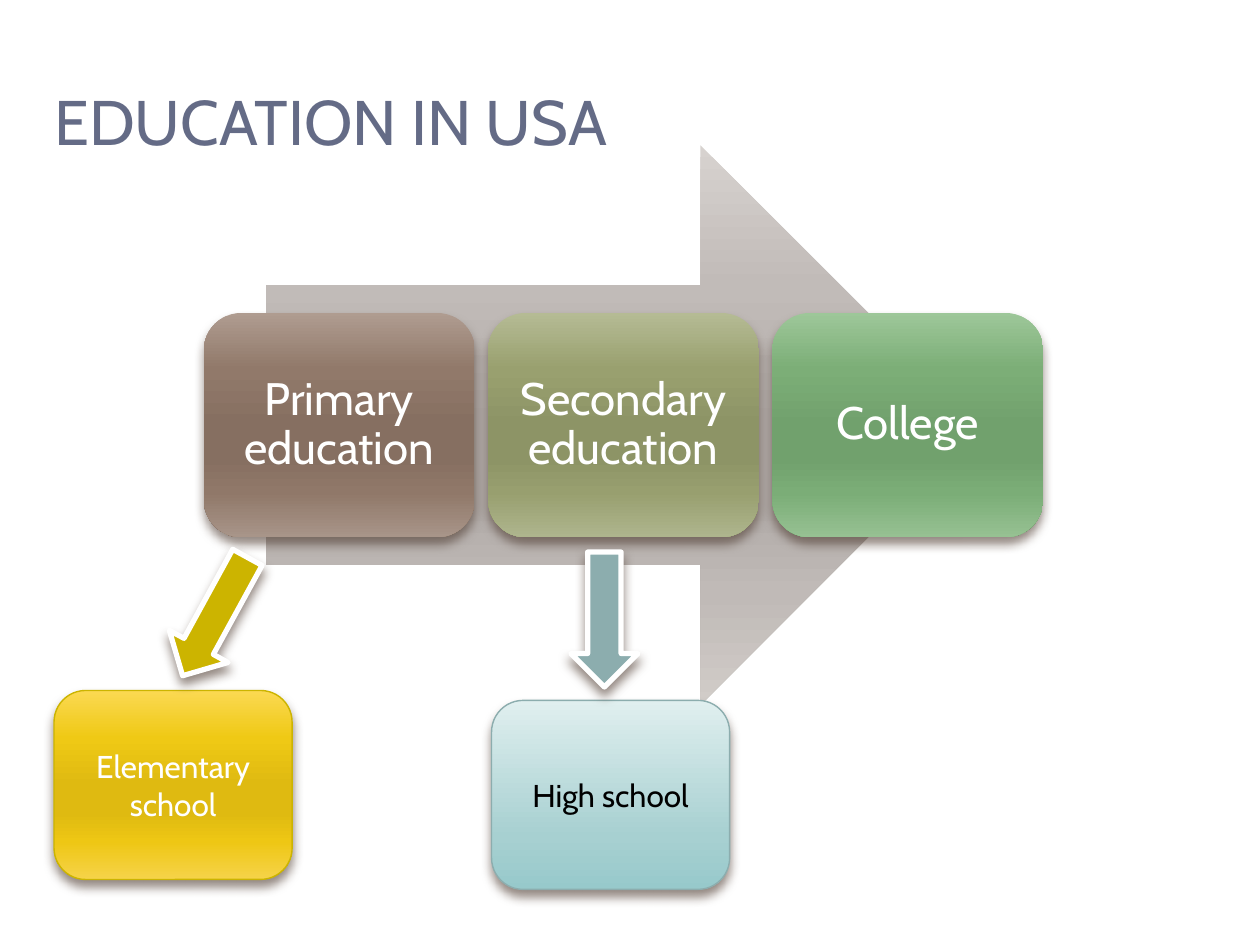
from dataclasses import dataclass
from typing import Optional

import pptx
import pptx.dml.color
import pptx.enum.shapes
import pptx.enum.text
import pptx.oxml
import pptx.oxml.ns
import pptx.util
from pptx.util import Cm

SHAPE = pptx.enum.shapes.MSO_SHAPE
ALIGN = pptx.enum.text.PP_ALIGN
MIDDLE = pptx.enum.text.MSO_ANCHOR.MIDDLE
FONT = "Cabin"
COLORS = {
    "title": "646B86", "white": "FFFFFF", "black": "000000",
    "gold": "CCB400", "teal": "8CADAE", "shadow": "4E3B30",
}
SIX_STOPS = (0, 25, 50, 65, 80, 100)
GRADIENTS = {
    "flow": (SIX_STOPS, "D7D2CF C1BBB8 B2ACA9 B2ACA9 C0BAB7 D1CCC8"),
    "brown": (SIX_STOPS, "AF9C90 91796A 866F61 866F61 907869 A89589"),
    "olive": (SIX_STOPS, "B5BB94 99A06F 8D9466 8D9466 989F6F AEB58D"),
    "green": (SIX_STOPS, "9DC799 7CAE77 71A16D 71A16D 7BAD77 96C192"),
    "yellow": (SIX_STOPS, "FBD952 EFC915 DFBA11 DFBA11 EEC714 F6D349"),
    "aqua": ((0, 72, 100), "E0EFEF A7D0D1 97C9CB"),
}


@dataclass
class Box:
    """A filled shape; lengths in cm, line width in points."""
    kind: int
    left: float
    top: float
    width: float
    height: float
    fill: str
    line: Optional[str] = None
    line_width: float = 0.79
    rotation: float = 0
    shadow: bool = True
    text: str = ""
    size: float = 18
    color: str = "white"
    inset: float = 0.25
    spacing: float = 1.0


def rgb(name: str) -> pptx.dml.color.RGBColor:
    return pptx.dml.color.RGBColor.from_string(COLORS[name])


def format_run(r, size: float, color: str) -> None:
    for key, value in {"name": FONT, "size": pptx.util.Pt(size)}.items():
        setattr(r.font, key, value)
    r.font.color.rgb = rgb(color)


def set_gradient(s, name: str) -> None:
    positions, colors = GRADIENTS[name]
    stops = "".join(
        f'<a:gs pos="{pos * 1000}"><a:srgbClr val="{color}"/></a:gs>'
        for pos, color in zip(positions, colors.split()))
    grad = pptx.oxml.parse_xml(
        f'<a:gradFill {pptx.oxml.ns.nsdecls("a")} rotWithShape="1">'
        f'<a:gsLst>{stops}</a:gsLst><a:lin ang="5400000" scaled="0"/></a:gradFill>')
    s._element.spPr.find(pptx.oxml.ns.qn("a:prstGeom")).addnext(grad)


def add_shadow(s) -> None:
    effects = s._element.spPr.find(pptx.oxml.ns.qn("a:effectLst"))
    blur, dist = pptx.util.Pt(6), pptx.util.Pt(4)
    effects.append(pptx.oxml.parse_xml(
        f'<a:outerShdw {pptx.oxml.ns.nsdecls("a")} blurRad="{blur}" dist="{dist}" '
        f'dir="5400000" rotWithShape="0"><a:srgbClr val="{COLORS["shadow"]}">'
        '<a:alpha val="60000"/></a:srgbClr></a:outerShdw>'))


def add_box(slide, box: Box) -> None:
    s = slide.shapes.add_shape(
        box.kind, Cm(box.left), Cm(box.top), Cm(box.width), Cm(box.height))
    s.rotation = box.rotation
    if box.fill in GRADIENTS:
        set_gradient(s, box.fill)
    else:
        s.fill.solid()
        s.fill.fore_color.rgb = rgb(box.fill)
    if box.line:
        s.line.color.rgb = rgb(box.line)
        s.line.width = pptx.util.Pt(box.line_width)
    else:
        s.line.fill.background()
    s.shadow.inherit = False
    if box.shadow:
        add_shadow(s)
    if box.text:
        tf = s.text_frame
        settings = {"word_wrap": True, "vertical_anchor": MIDDLE,
                    "margin_left": Cm(box.inset), "margin_right": Cm(box.inset)}
        for key, value in settings.items():
            setattr(tf, key, value)
        p = tf.paragraphs[0]
        p.alignment = ALIGN.CENTER
        p.line_spacing = box.spacing
        r = p.add_run()
        r.text = box.text
        format_run(r, box.size, box.color)


def add_title(slide, text: str) -> None:
    s = slide.shapes.title
    place = {"left": 0.84, "top": 1.25, "width": 24.13, "height": 2.34}
    for key, value in place.items():
        setattr(s, key, Cm(value))
    s.text_frame.vertical_anchor = MIDDLE
    p = s.text_frame.paragraphs[0]
    p.alignment = ALIGN.LEFT
    r = p.add_run()
    r.text = text
    format_run(r, 36, "title")


def main() -> None:
    prs = pptx.Presentation()
    prs.slide_width, prs.slide_height = Cm(25.4), Cm(19.05)
    slide = prs.slides.add_slide(prs.slide_layouts[5])
    add_title(slide, "EDUCATION IN USA")

    # Background arrow
    add_box(slide, Box(SHAPE.RIGHT_ARROW, 5.36, 2.93, 14.4, 11.28, "flow", shadow=False))

    # Stages along the arrow
    stages = [("Primary education", "brown"), ("Secondary education", "olive"),
              ("College", "green")]
    for i, (text, fill) in enumerate(stages):
        add_box(slide, Box(SHAPE.ROUNDED_RECTANGLE, 4.11 + i * 5.73, 6.31, 5.46, 4.52,
                           fill, text=text, size=26, spacing=0.9))

    # Schools and the arrows leading to them
    schools = [("Elementary school", 1.09, 13.92, "yellow", "gold", "white"),
               ("High school", 9.91, 14.12, "aqua", "teal", "black")]
    for text, left, top, fill, line, color in schools:
        add_box(slide, Box(SHAPE.ROUNDED_RECTANGLE, left, top, 4.8, 3.81, fill,
                           line=line, text=text, color=color))
    for left, top, fill, rotation in [(3.66, 11.07, "gold", 28.7), (11.51, 11.13, "teal", 0)]:
        add_box(slide, Box(SHAPE.DOWN_ARROW, left, top, 1.35, 2.72, fill,
                           line="white", line_width=3, rotation=rotation))

    prs.save("out.pptx")


if __name__ == "__main__":
    main()
